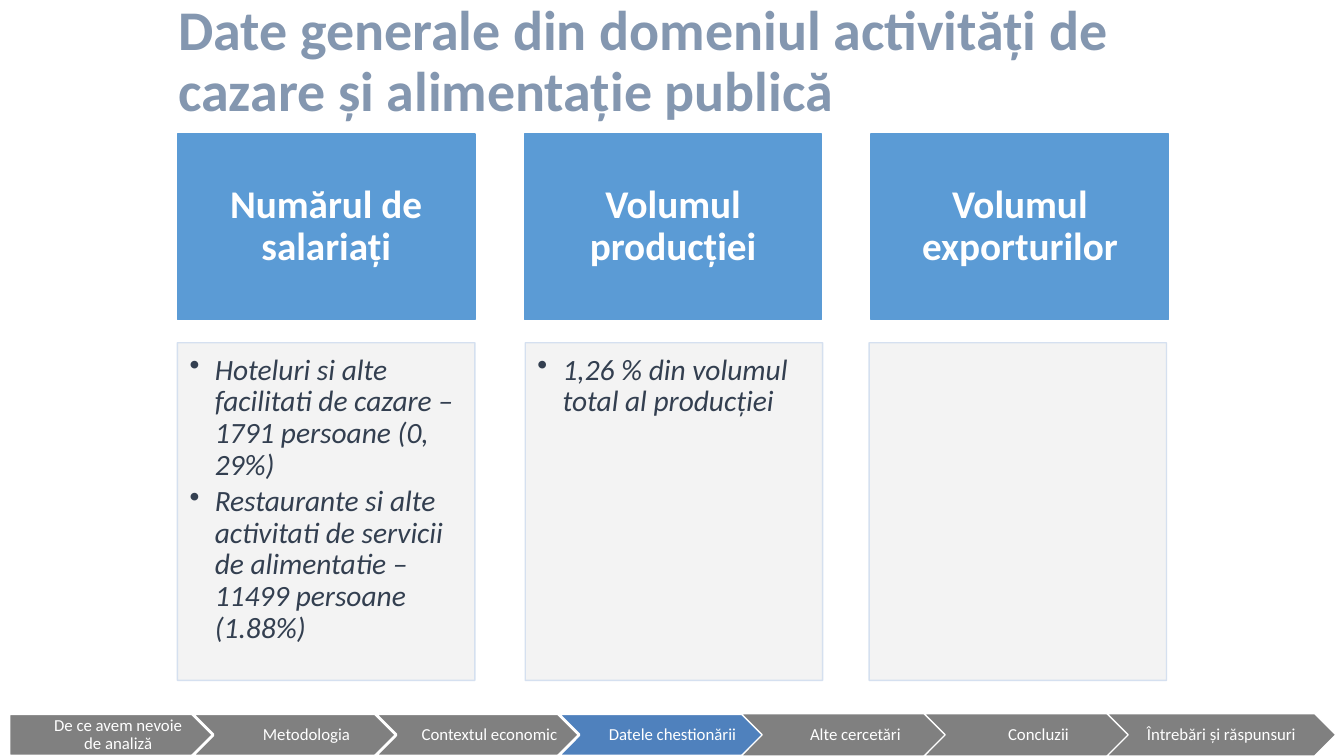
"""Build the slide on accommodation and catering data with its progress bar."""
from lxml import etree
from pptx import Presentation, util as u
from pptx.dml.color import RGBColor
from pptx.enum import shapes, text
from pptx.oxml import ns

WHITE = RGBColor(0xFF, 0xFF, 0xFF)
TITLE = RGBColor(0x84, 0x97, 0xB0)
HEADER = RGBColor(0x5B, 0x9B, 0xD5)
PANEL = RGBColor(0xF2, 0xF2, 0xF2)
PANEL_EDGE = RGBColor(0xD2, 0xDE, 0xEF)
BODY = RGBColor(0x33, 0x3F, 0x50)
STEP = RGBColor(0x80, 0x80, 0x80)
CURRENT = RGBColor(0x4F, 0x81, 0xBD)

COLUMN_LEFT, COLUMN_PITCH, COLUMN_WIDTH = 1.76, 3.44, 2.95
HEADER_ROW = (1.33, 1.84)
PANEL_ROW = (3.4, 3.35)
STEP_LEFT, STEP_PITCH, STEP_WIDTH = 0.09, 1.815, 2.27
STEP_ROW = (7.08, 0.42)
CURRENT_STEP = 3

COLUMNS = [
    ("Numărul de salariați", 0, [
        "Hoteluri si alte facilitati de cazare – 1791 persoane (0, 29%)",
        "Restaurante si alte activitati de servicii de alimentatie – "
        "11499 persoane (1.88%)"]),
    ("Volumul producției", 0.01, ["1,26 % din volumul total al producției"]),
    ("Volumul exporturilor", -0.02, []),
]
STEPS = ["De ce avem nevoie\vde analiză", "Metodologia", "Contextul economic",
         "Datele chestionării", "Alte cercetări", "Concluzii",
         "Întrebări și răspunsuri"]


def add_box(s, kind, left, width, row, fill, line, weight=1):
    top, height = row
    sp = s.shapes.add_shape(kind, *map(u.Inches, (left, top, width, height)))
    sp.shadow.inherit = False
    sp.fill.solid()
    sp.fill.fore_color.rgb = fill
    sp.line.color.rgb = line
    sp.line.width = u.Pt(weight)
    return sp


def write(sp, lines, size, color, insets, anchor=text.MSO_ANCHOR.MIDDLE,
          align=text.PP_ALIGN.CENTER, after=0, bold=False, italic=False):
    tf = sp.text_frame
    tf.word_wrap = True
    tf.vertical_anchor = anchor
    (tf.margin_left, tf.margin_top,
     tf.margin_right, tf.margin_bottom) = map(u.Inches, insets)
    for i, line in enumerate(lines):
        p = tf.add_paragraph() if i else tf.paragraphs[0]
        p.text = line
        p.alignment = align
        p.line_spacing = 0.9
        p.space_after = u.Pt(after)
        p.font.name = "Calibri"
        p.font.size = u.Pt(size)
        p.font.bold = bold
        p.font.italic = italic
        p.font.color.rgb = color
    return tf


def add_bullets(tf):
    for p in tf.paragraphs:
        pPr = p._p.get_or_add_pPr()
        pPr.set("marL", str(u.Inches(0.25)))
        pPr.set("indent", str(-u.Inches(0.25)))
        bullet = etree.Element(ns.qn("a:buChar"), char="•")
        pPr.find(ns.qn("a:defRPr")).addprevious(bullet)


def make_translucent(sp, percent):
    for color in sp._element.spPr.iter(ns.qn("a:srgbClr")):
        etree.SubElement(color, ns.qn("a:alpha"), val=str(percent * 1000))


def add_title(s, title):
    sp = s.shapes.add_textbox(*map(u.Inches, (1.67, 0, 10.33, 1.25)))
    write(sp, [title], 40, TITLE, (0.1, 0.05, 0.1, 0.05),
          align=text.PP_ALIGN.LEFT, bold=True)


def add_column(s, index, heading, nudge, points):
    left = COLUMN_LEFT + index * COLUMN_PITCH
    rectangle = shapes.MSO_SHAPE.RECTANGLE
    sp = add_box(s, rectangle, left, COLUMN_WIDTH, HEADER_ROW, HEADER, HEADER)
    write(sp, [heading], 28, WHITE, (0.22, 0.12, 0.22, 0.12), bold=True)
    sp = add_box(s, rectangle, left + nudge, COLUMN_WIDTH, PANEL_ROW,
                 PANEL, PANEL_EDGE)
    make_translucent(sp, 90)
    if points:
        tf = write(sp, points, 21, BODY, (0.12, 0.12, 0.16, 0.18),
                   text.MSO_ANCHOR.TOP, text.PP_ALIGN.LEFT, after=3,
                   italic=True)
        add_bullets(tf)


def add_step(s, index, label):
    kind = shapes.MSO_SHAPE.CHEVRON if index else shapes.MSO_SHAPE.PENTAGON
    sp = add_box(s, kind, STEP_LEFT + index * STEP_PITCH, STEP_WIDTH, STEP_ROW,
                 CURRENT if index == CURRENT_STEP else STEP, WHITE,
                 weight=2 if index <= CURRENT_STEP else 1)
    write(sp, [label], 12, WHITE, (0, 0.04, 0, 0.04))


def main():
    prs = Presentation()
    prs.slide_width, prs.slide_height = u.Inches(13.33), u.Inches(7.5)
    s = prs.slides.add_slide(prs.slide_layouts[6])
    add_title(s, "Date generale din domeniul activități de cazare "
                 "și alimentație publică")
    for i, column in enumerate(COLUMNS):
        add_column(s, i, *column)
    for i, label in enumerate(STEPS):
        add_step(s, i, label)
    prs.save("out.pptx")


if __name__ == "__main__":
    main()
